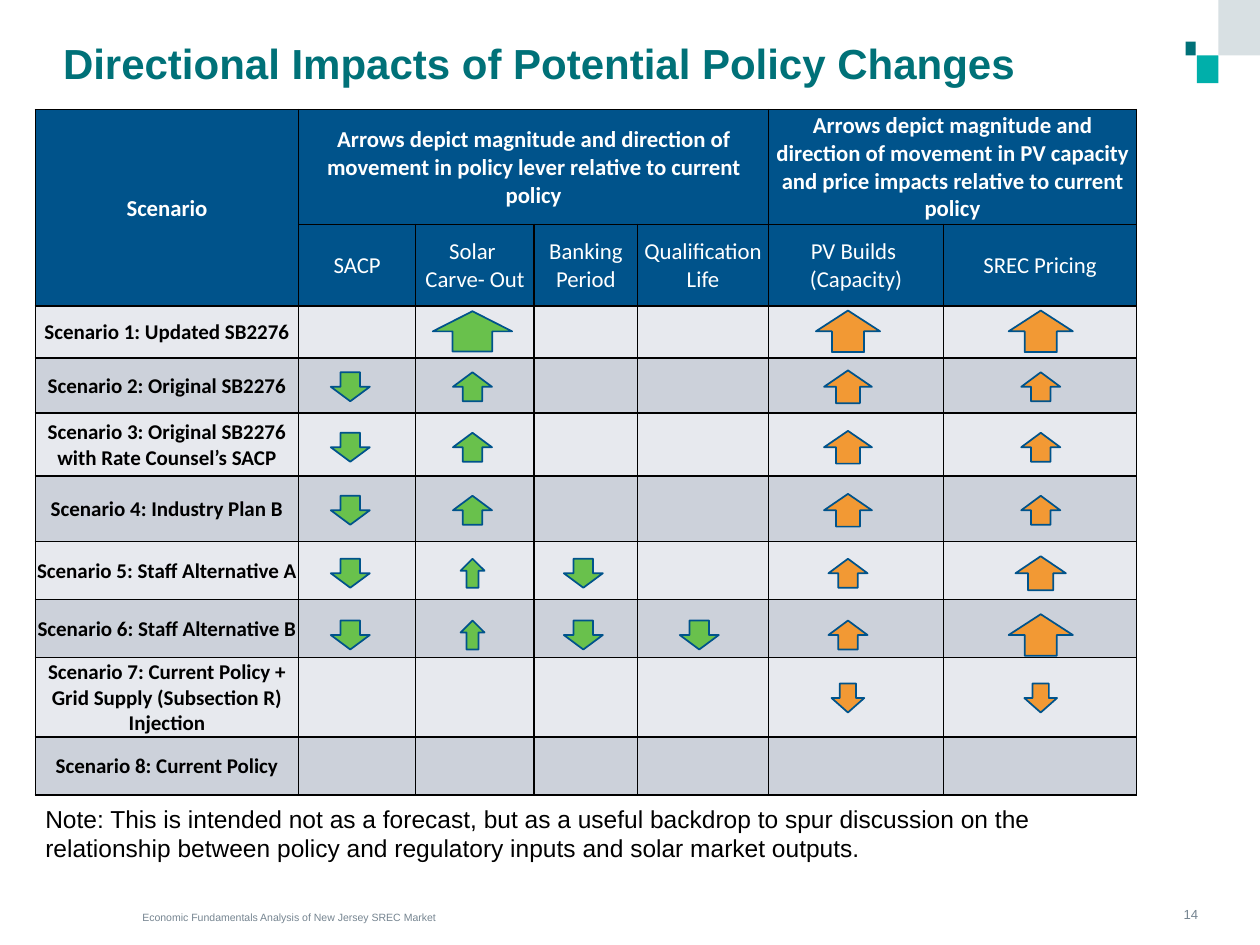
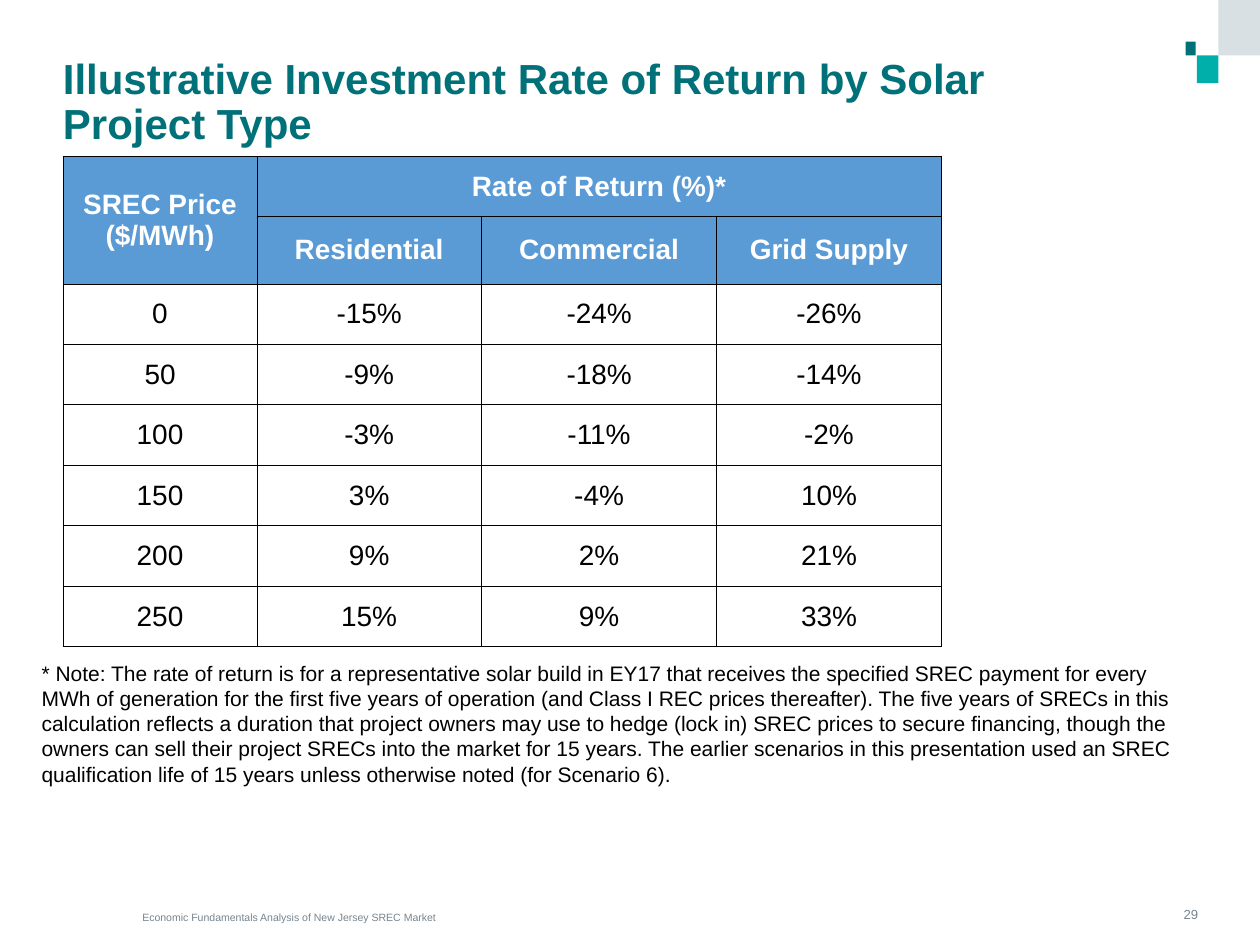
from lxml import etree
from pptx import Presentation
from pptx.dml.color import RGBColor
from pptx.enum.shapes import MSO_SHAPE
from pptx.enum.text import MSO_ANCHOR, PP_ALIGN
from pptx.oxml.ns import qn
from pptx.util import Inches, Pt

RECT, UP, DOWN = MSO_SHAPE.RECTANGLE, MSO_SHAPE.UP_ARROW, MSO_SHAPE.DOWN_ARROW
TOP, MID, LOW = MSO_ANCHOR.TOP, MSO_ANCHOR.MIDDLE, MSO_ANCHOR.BOTTOM
LEFT, CENTER, RIGHT = PP_ALIGN.LEFT, PP_ALIGN.CENTER, PP_ALIGN.RIGHT

# Shared look
TEAL, GRAY, BLACK, WHITE = "007178", "768591", "000000", "FFFFFF"
NAVY, SKY, GREEN, ORANGE = "00538B", "5B9BD5", "69C14C", "F29934"
PALE, DARK = "E7E9EE", "CCD1DA"
FOOTER = "Economic Fundamentals Analysis of New Jersey SREC Market"
CORNER = [
    ((9.41, 0.33, 0.08, 0.11), TEAL),
    ((9.5, 0.44, 0.17, 0.22), "00AFAA"),
    ((9.67, 0, 0.33, 0.44), "D8E0E3"),
]


def font(size, color, bold=False, name="Arial"):
    return {"size": Pt(size), "color": color, "bold": bold, "name": name}


TITLE, FOOT, PAGE = font(24, TEAL, True), font(6, GRAY), font(7.5, GRAY)

# Slide 1: scenarios, with arrows as (column, direction, size)
IMPACT = {
    "title": "Directional Impacts of Potential Policy Changes",
    "box": (0.5, 0.34, 7.88, 0.78),
    "page": "14",
    "note": "Note: This is intended not as a forecast, but as a useful backdrop "
            "to spur discussion on the relationship between policy and "
            "regulatory inputs and solar market outputs.",
    "place": (0.36, 6.38, 8.84, 0.31),
    "size": 14,
}
POLICY = ("Arrows depict magnitude and direction of movement in policy lever "
          "relative to current policy")
EFFECT = ("Arrows depict magnitude and direction of movement in PV capacity "
          "and price impacts relative to current policy")
LEVERS = ["", "SACP", "Solar \nCarve- Out", "Banking Period",
          "Qualification Life", "PV Builds \n(Capacity)", "SREC Pricing"]
CASES = [
    ("Scenario 1: Updated SB2276",
     [(2, UP, "wide"), (5, UP, "large"), (6, UP, "large")]),
    ("Scenario 2: Original SB2276",
     [(1, DOWN, "small"), (2, UP, "small"), (5, UP, "mid"), (6, UP, "small")]),
    ("Scenario 3: Original SB2276 with Rate Counsel’s SACP",
     [(1, DOWN, "small"), (2, UP, "small"), (5, UP, "mid"), (6, UP, "small")]),
    ("Scenario 4: Industry Plan B",
     [(1, DOWN, "small"), (2, UP, "small"), (5, UP, "mid"), (6, UP, "small")]),
    ("Scenario 5: Staff Alternative A",
     [(1, DOWN, "small"), (2, UP, "thin"), (3, DOWN, "small"),
      (5, UP, "small"), (6, UP, "big")]),
    ("Scenario 6: Staff Alternative B",
     [(1, DOWN, "small"), (2, UP, "thin"), (3, DOWN, "small"),
      (4, DOWN, "small"), (5, UP, "small"), (6, UP, "large")]),
    ("Scenario 7: Current Policy + Grid Supply (Subsection R) Injection",
     [(5, DOWN, "slim"), (6, DOWN, "slim")]),
    ("Scenario 8: Current Policy", []),
]
SIZES = {"thin": (0.19, 0.23), "slim": (0.26, 0.23), "small": (0.31, 0.23),
         "mid": (0.38, 0.26), "big": (0.4, 0.27), "large": (0.51, 0.33),
         "wide": (0.63, 0.32)}
MIDS = {1: 2.78, 2: 3.75, 3: 4.63, 4: 5.55, 5: 6.73, 6: 8.26}
LEVELS = [2.63, 3.07, 3.55, 4.05, 4.55, 5.04, 5.54]

# Slide 2: returns by price
RETURN = {
    "title": "Illustrative Investment Rate of Return by Solar Project Type",
    "box": (0.5, 0.46, 8.1, 0.78),
    "page": "29",
    "note": "* Note: The rate of return is for a representative solar build in "
            "EY17 that receives the specified SREC payment for every MWh of "
            "generation for the first five years of operation (and Class I REC "
            "prices thereafter). The five years of SRECs in this calculation "
            "reflects a duration that project owners may use to hedge (lock in) "
            "SREC prices to secure financing, though the owners can sell their "
            "project SRECs into the market for 15 years. The earlier scenarios "
            "in this presentation used an SREC qualification life of 15 years "
            "unless otherwise noted (for Scenario 6).",
    "place": (0.33, 5.24, 8.98, 1.31),
    "size": 12,
}
RATES = [
    ("SREC Price ($/MWh)", "Rate of Return (%)*", "", ""),
    ("", "Residential", "Commercial", "Grid Supply"),
    ("0", "-15%", "-24%", "-26%"),
    ("50", "-9%", "-18%", "-14%"),
    ("100", "-3%", "-11%", "-2%"),
    ("150", "3%", "-4%", "10%"),
    ("200", "9%", "2%", "21%"),
    ("250", "15%", "9%", "33%"),
]


def rgb(code):
    return RGBColor.from_string(code)


def write(frame, text, look, align=LEFT, space=None):
    for i, line in enumerate(text.split("\n")):
        para = frame.paragraphs[0] if i == 0 else frame.add_paragraph()
        para.alignment, para.line_spacing = align, space
        run = para.add_run()
        run.text = line
        for key, value in look.items():
            if key == "color":
                run.font.color.rgb = rgb(value)
            else:
                setattr(run.font, key, value)


def label(slide, box, text, look, align=LEFT, anchor=TOP, space=None):
    frame = slide.shapes.add_textbox(*map(Inches, box)).text_frame
    frame.word_wrap, frame.vertical_anchor = True, anchor
    for side in ("left", "top", "right", "bottom"):
        setattr(frame, f"margin_{side}", 0)
    write(frame, text, look, align, space)


def draw(slide, kind, box, fill, edge=None):
    shape = slide.shapes.add_shape(kind, *map(Inches, box))
    shape.shadow.inherit = False
    shape.fill.solid()
    shape.fill.fore_color.rgb = rgb(fill)
    if edge:
        shape.line.color.rgb = rgb(edge)
        shape.line.width = Pt(1)
    else:
        shape.line.fill.background()


def border(cell, width):
    props = cell._tc.get_or_add_tcPr()
    for tag in ("a:lnL", "a:lnR", "a:lnT", "a:lnB"):
        line = etree.SubElement(props, qn(tag), w=str(Pt(width)))
        fill = etree.SubElement(line, qn("a:solidFill"))
        etree.SubElement(fill, qn("a:srgbClr"), val=BLACK)


def grid(slide, spot, cols, rows, data, looks, spans, width, pad):
    """Each look is (fill, font) for one row; each span is two corner cells."""
    box = (*spot, sum(cols), sum(rows))
    table = slide.shapes.add_table(len(rows), len(cols),
                                   *map(Inches, box)).table
    for col, size in zip(table.columns, cols):
        col.width = Inches(size)
    for row, size in zip(table.rows, rows):
        row.height = Inches(size)
    for r, (fill, look) in enumerate(looks):
        for c, text in enumerate(data[r]):
            cell = table.cell(r, c)
            border(cell, width)
            cell.fill.solid()
            cell.fill.fore_color.rgb = rgb(fill)
            cell.vertical_anchor = MID
            cell.margin_left = cell.margin_right = cell.margin_top = Inches(pad)
            cell.margin_bottom = 0
            if text:
                write(cell.text_frame, text, look, CENTER)
    for start, end in spans:
        table.cell(*start).merge(table.cell(*end))


def start(deck, info):
    """Add a slide with its corner, title, footer, page number and note."""
    slide = deck.slides.add_slide(deck.slide_layouts[6])
    for box, fill in CORNER:
        draw(slide, RECT, box, fill)
    label(slide, (1.13, 7.13, 3.57, 0.2), FOOTER, FOOT, anchor=LOW)
    label(slide, info["box"], info["title"], TITLE, space=0.9)
    label(slide, (9.12, 6.92, 0.39, 0.4), info["page"], PAGE, RIGHT, LOW)
    label(slide, info["place"], info["note"], font(info["size"], BLACK))
    return slide


def impact(deck):
    slide = start(deck, IMPACT)
    data = [["Scenario", POLICY, "", "", "", EFFECT, ""], LEVERS]
    data += [[name] + [""] * 6 for name, _ in CASES]
    looks = [(NAVY, font(13, WHITE, bold, "Calibri")) for bold in (True, False)]
    body = font(12, BLACK, True, "Calibri")
    looks += [((PALE, DARK)[i % 2], body) for i in range(len(CASES))]
    grid(slide, (0.28, 0.87), [2.09, 0.93, 0.94, 0.82, 1.04, 1.39, 1.53],
         [0.91, 0.65, 0.41, 0.44, 0.5, 0.52, 0.46, 0.46, 0.63, 0.46],
         data, looks,
         [((0, 0), (1, 0)), ((0, 1), (0, 4)), ((0, 5), (0, 6))], 1, 0.01)
    # Arrows centred on their column and row
    for (_, arrows), y in zip(CASES, LEVELS):
        for col, kind, size in arrows:
            w, h = SIZES[size]
            fill = GREEN if col < 5 else ORANGE
            draw(slide, kind, (MIDS[col] - w / 2, y - h / 2, w, h), fill, NAVY)


def returns(deck):
    slide = start(deck, RETURN)
    looks = [(SKY, font(16, WHITE, True))] * 2
    looks += [(WHITE, font(16, BLACK))] * (len(RATES) - 2)
    grid(slide, (0.5, 1.24), [1.54, 1.78, 1.87, 1.78], [0.48] * len(RATES),
         RATES, looks, [((0, 0), (1, 0)), ((0, 1), (0, 3))], 0.5, 0)


def main():
    deck = Presentation()
    deck.slide_width, deck.slide_height = Inches(10), Inches(7.5)
    impact(deck)
    returns(deck)
    deck.save("out.pptx")


if __name__ == "__main__":
    main()
